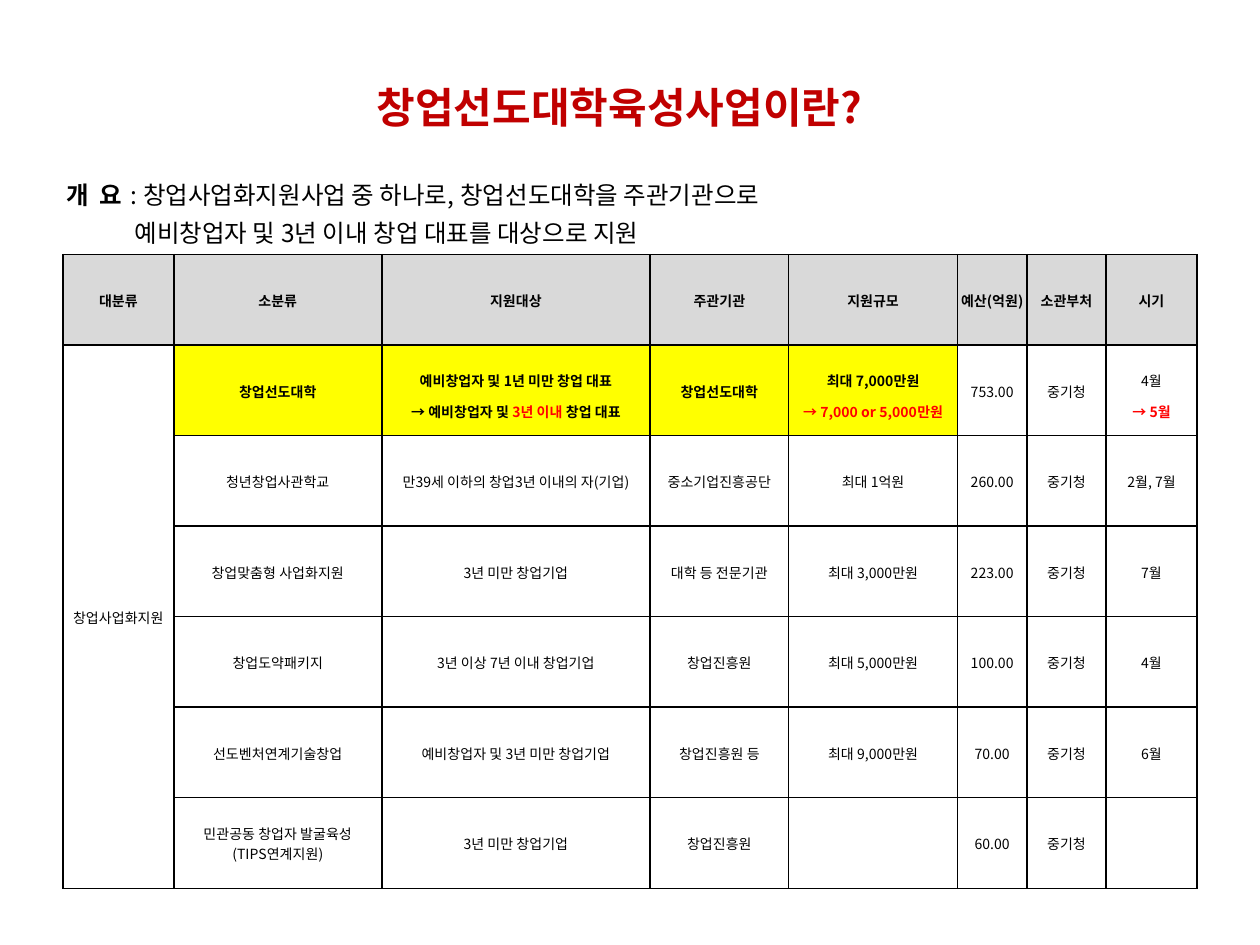
from lxml.etree import SubElement
from pptx import Presentation
from pptx.dml.color import RGBColor
from pptx.enum.text import MSO_ANCHOR as ANCHOR, MSO_AUTO_SIZE as AUTO, PP_ALIGN as ALIGN
from pptx.oxml.ns import qn
from pptx.util import Inches, Pt

FONT = "Noto Sans CJK KR"
BLACK, RED, DARK_RED = "000000", "FF0000", "C00000"
GRAY, YELLOW = "D9D9D9", "FFFF00"
COLS = [0.88, 1.65, 2.13, 1.1, 1.34, 0.55, 0.63, 0.72]
CATEGORY = "창업사업화지원"
HEADER = ["대분류", "소분류", "지원대상", "주관기관", "지원규모", "예산(억원)", "소관부처", "시기"]
PROGRAMS = [
    ["창업선도대학", "예비창업자 및 1년 미만 창업 대표\n→ 예비창업자 및 *3년 이내 *창업 대표",
     "창업선도대학", "최대 7,000만원\n*→ 7,000 or 5,000만원*", "753.00", "중기청", "4월\n*→ 5월*"],
    ["청년창업사관학교", "만39세 이하의 창업3년 이내의 자(기업)",
     "중소기업진흥공단", "최대 1억원", "260.00", "중기청", "2월, 7월"],
    ["창업맞춤형 사업화지원", "3년 미만 창업기업",
     "대학 등 전문기관", "최대 3,000만원", "223.00", "중기청", "7월"],
    ["창업도약패키지", "3년 이상 7년 이내 창업기업",
     "창업진흥원", "최대 5,000만원", "100.00", "중기청", "4월"],
    ["선도벤처연계기술창업", "예비창업자 및 3년 미만 창업기업",
     "창업진흥원 등", "최대 9,000만원", "70.00", "중기청", "6월"],
    ["민관공동 창업자 발굴육성\n(TIPS연계지원)", "3년 미만 창업기업",
     "창업진흥원", "", "60.00", "중기청", ""],
]


def rgb(color):
    """Turn a hex string into a colour."""
    return RGBColor.from_string(color)


def style(p, size, color=BLACK, bold=False, align=ALIGN.CENTER, spacing=1.0):
    """Set the font and layout of a paragraph."""
    f = p.font
    f.name, f.size, f.bold = FONT, Pt(size), bold
    f.color.rgb = rgb(color)
    p.alignment, p.line_spacing = align, spacing
    SubElement(p._p.pPr.find(qn("a:defRPr")), qn("a:ea"), typeface=FONT)


def add_run(p, text):
    """Append a run of text to a paragraph."""
    r = p.add_run()
    r.text = text
    return r


def add_text_box(s, left, top, width, height):
    """Add a wrapping text box and return its text frame."""
    tf = s.shapes.add_textbox(left, top, width, height).text_frame
    tf.word_wrap, tf.auto_size = True, AUTO.SHAPE_TO_FIT_TEXT
    return tf


def add_title(s, left, top, width, height):
    """Place the slide title."""
    p = add_text_box(s, left, top, width, height).paragraphs[0]
    add_run(p, "창업선도대학육성사업이란?")
    style(p, 24, DARK_RED, bold=True)


def add_overview(s, left, top, width, height):
    """Place the two-line overview with its bold label."""
    tf = add_text_box(s, left, top, width, height)
    first, second = tf.paragraphs[0], tf.add_paragraph()
    label = add_run(first, "개 요")
    label.font.bold = True
    label.font._element.set("spc", "150")
    add_run(first, " : 창업사업화지원사업 중 하나로, 창업선도대학을 주관기관으로")
    add_run(second, "예비창업자 및 3년 이내 창업 대표를 대상으로 지원")
    for p in (first, second):
        style(p, 14, align=ALIGN.JUSTIFY, spacing=1.3)
    second._p.pPr.set("marL", str(Inches(0.54)))


def set_borders(cell):
    """Draw a thin black line on all four sides of a cell."""
    tc_pr = cell._tc.get_or_add_tcPr()
    for side in ("a:lnL", "a:lnR", "a:lnT", "a:lnB"):
        ln = SubElement(tc_pr, qn(side), w=str(Pt(1)))
        SubElement(SubElement(ln, qn("a:solidFill")), qn("a:srgbClr"), val=BLACK)


def fill_cell(cell, text, fill=None, spacing=1.0):
    """Write a cell; filled cells are bold and text between asterisks is red."""
    set_borders(cell)
    if fill:
        cell.fill.solid()
        cell.fill.fore_color.rgb = rgb(fill)
    else:
        cell.fill.background()
    cell.vertical_anchor = ANCHOR.MIDDLE
    cell.margin_left = cell.margin_right = cell.margin_top = Inches(0.01)
    cell.margin_bottom = 0
    tf = cell.text_frame
    for i, line in enumerate(text.split("\n")):
        p = tf.add_paragraph() if i else tf.paragraphs[0]
        style(p, 8, bold=bool(fill), spacing=spacing)
        for j, part in enumerate(line.split("*")):
            if part:
                r = add_run(p, part)
                if j % 2:
                    r.font.bold = True
                    r.font.color.rgb = rgb(RED)


def add_program_table(s, left, top, width, height):
    """Place the table of support programs."""
    rows = [HEADER] + [[CATEGORY if i == 0 else ""] + row for i, row in enumerate(PROGRAMS)]
    table = s.shapes.add_table(len(rows), len(COLS), left, top, width, height).table
    table.first_row = table.horz_banding = False
    for col, w in zip(table.columns, COLS):
        col.width = Inches(w)
    for i, row in enumerate(rows):
        for j, text in enumerate(row):
            highlighted = i == 1 and 1 <= j <= 4
            fill = GRAY if i == 0 else YELLOW if highlighted else None
            spacing = 1.5 if i == 1 and "\n" in text else 1.0
            fill_cell(table.cell(i, j), text, fill, spacing)
    table.cell(1, 0).merge(table.cell(len(rows) - 1, 0))


def main():
    """Build the slide and save it."""
    prs = Presentation()
    prs.slide_width, prs.slide_height = Inches(10), Inches(7.5)
    s = prs.slides.add_slide(prs.slide_layouts[6])
    add_title(s, Inches(2.24), Inches(0.6), Inches(5.35), Inches(0.5))
    add_overview(s, Inches(0.43), Inches(1.31), Inches(9.13), Inches(0.71))
    add_program_table(s, Inches(0.5), Inches(2.02), Inches(9), Inches(5.03))
    prs.save("out.pptx")


if __name__ == "__main__":
    main()
